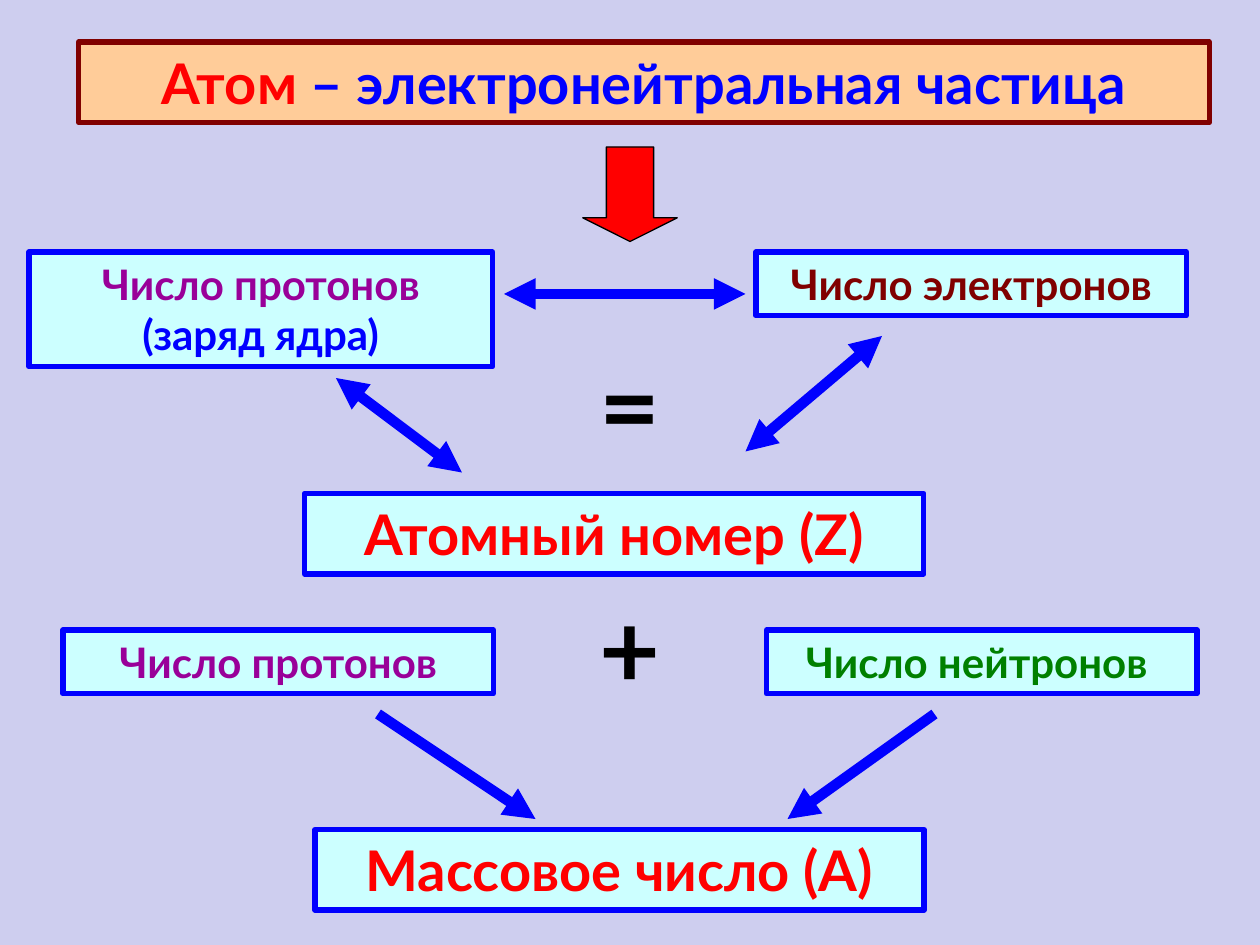
from collections import namedtuple

from lxml.etree import SubElement
from pptx import Presentation
from pptx.dml.color import RGBColor
from pptx.enum.shapes import MSO_CONNECTOR, MSO_SHAPE
from pptx.enum.text import MSO_ANCHOR, PP_ALIGN
from pptx.oxml.ns import qn
from pptx.util import Pt

Box = namedtuple("Box", "left top width height")

BLUE, RED, PURPLE, BROWN = "0000FF", "FF0000", "990099", "800000"
GREEN, BLACK, CYAN, PEACH = "008000", "000000", "CCFFFF", "FFCC99"
LARGE, SMALL = 46, 36.5
SIDE_WIDTH = 246


def color(value):
    return RGBColor.from_string(value)


def inside(box, left, top, width, height):
    return Box(box.left + left, box.top + top, width, height)


def add_text(shape, *parts, size):
    frame = shape.text_frame
    frame.word_wrap = True
    frame.vertical_anchor = MSO_ANCHOR.TOP
    para = frame.paragraphs[0]
    para.alignment = PP_ALIGN.CENTER
    for text, fill in parts:
        span = para.add_run()
        span.text = text
        span.font.name = "Lato"
        span.font.size = Pt(size)
        span.font.bold = True
        span.font.color.rgb = color(fill)


def add_filled(page, kind, box, fill, line, weight):
    shape = page.shapes.add_shape(kind, *map(Pt, box))
    shape.shadow.inherit = False
    shape.fill.solid()
    shape.fill.fore_color.rgb = color(fill)
    shape.line.color.rgb = color(line)
    shape.line.width = Pt(weight)
    return shape


def add_card(page, box, *parts, size=24, fill=CYAN, line=BLUE):
    card = add_filled(page, MSO_SHAPE.RECTANGLE, box, fill, line, 3)
    add_text(card, *parts, size=size)


def add_sign(page, box, sign):
    add_text(page.shapes.add_textbox(*map(Pt, box)), (sign, BLACK), size=60)


def add_arrow(page, box, start, end, both=False):
    points = [Pt(edge + shift) for point in (start, end)
              for edge, shift in zip((box.left, box.top), point)]
    arrow = page.shapes.add_connector(MSO_CONNECTOR.STRAIGHT, *points)
    arrow.line.color.rgb = color(BLUE)
    arrow.line.width = Pt(6)
    line = arrow.line._get_or_add_ln()
    for end_name in ("a:headEnd", "a:tailEnd") if both else ("a:tailEnd",):
        SubElement(line, qn(end_name), type="triangle")
    SubElement(arrow._element.spPr, qn("a:effectLst"))


def build_heading(page, box):
    add_card(page, inside(box, 0, 0, box.width, LARGE), ("Атом ", RED),
             ("– электронейтральная частица", BLUE),
             size=32, fill=PEACH, line=BROWN)
    add_filled(page, MSO_SHAPE.DOWN_ARROW, inside(box, 288, 60, 54, 54),
               RED, BLACK, 0.75).adjustments[1] = 0.25


def build_equality(page, box):
    add_card(page, inside(box, 0, 0, 265, 65.5),
             ("Число протонов ", PURPLE), ("(заряд ядра)", BLUE))
    add_card(page, inside(box, box.width - SIDE_WIDTH, 0, SIDE_WIDTH, SMALL),
             ("Число электронов", BROWN))
    add_sign(page, inside(box, 298.5, 47, 90, 79), "=")
    add_card(page, inside(box, 157.5, box.height - LARGE, 354, LARGE),
             ("Атомный номер (Z)", RED), size=32)
    for start, end in (((271.5, 24), (409.5, 24)),
                       ((175.5, 72), (247.5, 126)),
                       ((487.5, 48), (409.5, 114))):
        add_arrow(page, box, start, end, both=True)


def build_sum(page, box):
    for left, text, fill in ((0, "Число протонов", PURPLE),
                             (box.width - SIDE_WIDTH, "Число нейтронов ", GREEN)):
        add_card(page, inside(box, left, 30, SIDE_WIDTH, SMALL), (text, fill))
    add_sign(page, inside(box, 279, 0, 90, 79), "+")
    add_card(page, inside(box, 144, box.height - LARGE, 348, LARGE),
             ("Массовое число (А)", RED), size=32)
    for start, end in (((180, 78), (270, 138)), ((498, 78), (414, 138))):
        add_arrow(page, box, start, end)


def main():
    deck = Presentation()
    deck.slide_width, deck.slide_height = Pt(720), Pt(540)
    page = deck.slides.add_slide(deck.slide_layouts[6])
    page.background.fill.solid()
    page.background.fill.fore_color.rgb = color("CECEEF")
    build_heading(page, Box(45, 24, 646, 114))
    build_equality(page, Box(16.5, 144, 661.5, 184))
    build_sum(page, Box(36, 330, 648, 190))
    deck.save("out.pptx")


if __name__ == "__main__":
    main()
